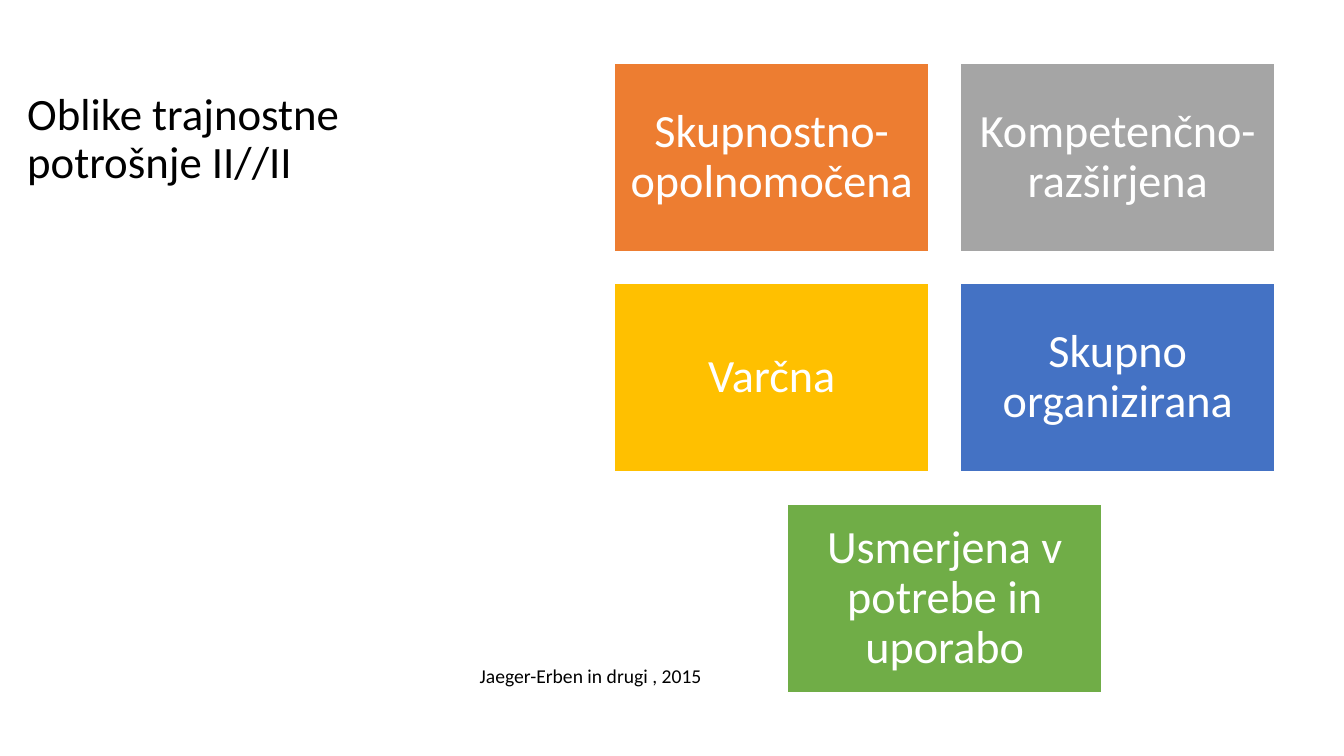
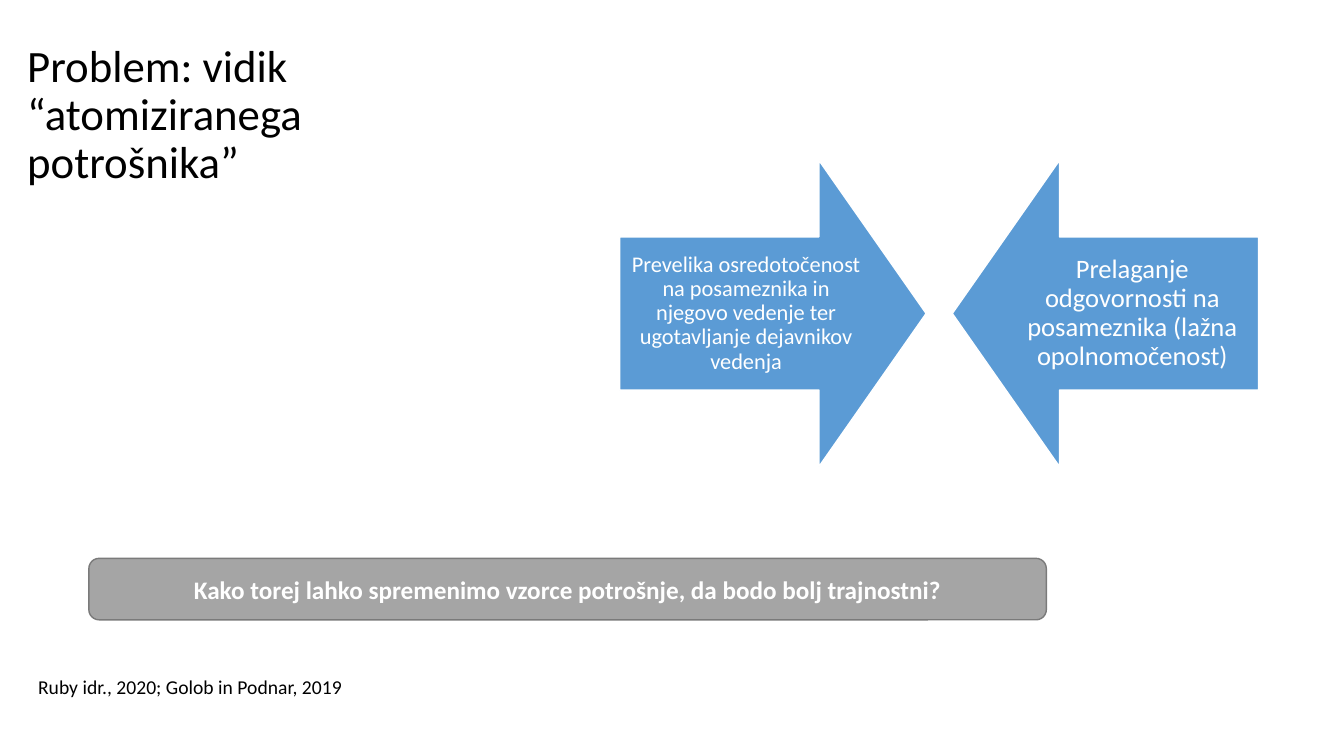
from dataclasses import dataclass

from pptx import Presentation
from pptx.dml.color import RGBColor
from pptx.enum.shapes import MSO_SHAPE as Preset
from pptx.enum.text import MSO_ANCHOR as Anchor, MSO_AUTO_SIZE as AutoSize, PP_ALIGN as Align
from pptx.util import Cm, Pt


@dataclass(frozen=True)
class Theme:
    font: str = "Calibri"
    black: str = "000000"
    white: str = "FFFFFF"
    orange: str = "ED7D31"
    gray: str = "A5A5A5"
    dark_gray: str = "7A7A7A"
    yellow: str = "FFC000"
    blue: str = "4472C4"
    green: str = "70AD47"
    light_blue: str = "5B9BD5"
    title_size: int = 32
    tile_size: int = 33
    banner_size: int = 18
    source_size: int = 14


@dataclass(frozen=True)
class Box:
    """A rectangle on the slide, in centimetres."""
    left: float
    top: float
    width: float
    height: float

    def lengths(self) -> tuple[Cm, Cm, Cm, Cm]:
        return Cm(self.left), Cm(self.top), Cm(self.width), Cm(self.height)


@dataclass(frozen=True)
class Tile:
    text: str
    fill: str


@dataclass(frozen=True)
class Arrow:
    text: str
    preset: Preset
    left: float
    size: int
    inset: float


THEME = Theme()
TITLE_BOX = Box(0.43, 0.43, 10.92, 4.45)

TILE_ROWS = [
    [Tile("Skupnostno-opolnomočena", THEME.orange), Tile("Kompetenčno-razširjena", THEME.gray)],
    [Tile("Varčna", THEME.yellow), Tile("Skupno organizirana", THEME.blue)],
    [Tile("Usmerjena v potrebe in uporabo", THEME.green)],
]
TILE_WIDTH, TILE_HEIGHT, TILE_GAP = 7.92, 4.75, 0.8
TILE_CENTER, TILE_TOP = 23.81, 1.6

ARROWS = [
    Arrow("Prevelika osredotočenost na posameznika in njegovo vedenje ter ugotavljanje "
          "dejavnikov vedenja", Preset.RIGHT_ARROW, 15.62, 16, 0.3),
    Arrow("Prelaganje odgovornosti na posameznika (lažna opolnomočenost)",
          Preset.LEFT_ARROW, 24.0, 19, 0.38),
]
ARROW_TOP, ARROW_SIZE = 4.04, 7.72


def write_text(shape, text: str, *, size: int, color: str, bold: bool = False,
               align: Align = Align.LEFT, anchor: Anchor = Anchor.TOP,
               line_spacing: float = 1.0, inset: float | None = None) -> None:
    frame = shape.text_frame
    frame.text = text
    frame.word_wrap = True
    frame.auto_size = AutoSize.NONE
    frame.vertical_anchor = anchor
    if inset is not None:
        frame.margin_left = frame.margin_right = Cm(inset)
        frame.margin_top = frame.margin_bottom = Cm(inset)
    paragraph = frame.paragraphs[0]
    paragraph.alignment = align
    paragraph.line_spacing = line_spacing
    font = paragraph.runs[0].font
    font.name = THEME.font
    font.size = Pt(size)
    font.bold = bold
    font.color.rgb = RGBColor.from_string(color)


def add_block(slide, preset: Preset, box: Box, text: str, *, fill: str, size: int,
              line: str = THEME.white, bold: bool = False, line_spacing: float = 0.9,
              inset: float | None = None):
    """Add a filled shape with centred white text."""
    shape = slide.shapes.add_shape(preset, *box.lengths())
    shape.shadow.inherit = False
    shape.fill.solid()
    shape.fill.fore_color.rgb = RGBColor.from_string(fill)
    shape.line.color.rgb = RGBColor.from_string(line)
    shape.line.width = Pt(1)
    write_text(shape, text, size=size, color=THEME.white, bold=bold, align=Align.CENTER,
               anchor=Anchor.MIDDLE, line_spacing=line_spacing, inset=inset)
    return shape


def add_titled_slide(presentation, title: str):
    slide = presentation.slides.add_slide(presentation.slide_layouts[5])
    shape = slide.shapes.title
    shape.left, shape.top, shape.width, shape.height = TITLE_BOX.lengths()
    write_text(shape, title, size=THEME.title_size, color=THEME.black,
               anchor=Anchor.BOTTOM, line_spacing=0.9)
    return slide


def add_source(slide, text: str, box: Box) -> None:
    shape = slide.shapes.add_textbox(*box.lengths())
    write_text(shape, text, size=THEME.source_size, color=THEME.black)


def build_forms_slide(presentation) -> None:
    slide = add_titled_slide(presentation, "Oblike trajnostne potrošnje II//II")
    for row, tiles in enumerate(TILE_ROWS):
        row_width = len(tiles) * (TILE_WIDTH + TILE_GAP) - TILE_GAP
        top = TILE_TOP + row * (TILE_HEIGHT + TILE_GAP)
        for column, tile in enumerate(tiles):
            left = TILE_CENTER - row_width / 2 + column * (TILE_WIDTH + TILE_GAP)
            add_block(slide, Preset.RECTANGLE, Box(left, top, TILE_WIDTH, TILE_HEIGHT),
                      tile.text, fill=tile.fill, size=THEME.tile_size, inset=0.36)
    add_source(slide, "Jaeger-Erben in drugi , 2015", Box(11.84, 16.61, 7.04, 0.86))


def build_problem_slide(presentation) -> None:
    slide = add_titled_slide(presentation, "Problem: vidik “atomiziranega potrošnika”")
    for arrow in ARROWS:
        shape = add_block(slide, arrow.preset, Box(arrow.left, ARROW_TOP, ARROW_SIZE, ARROW_SIZE),
                          arrow.text, fill=THEME.light_blue, size=arrow.size, inset=arrow.inset)
        shape.adjustments[0] = 0.5
        shape.adjustments[1] = 0.35
    add_block(slide, Preset.ROUNDED_RECTANGLE, Box(2.24, 14.07, 24.13, 1.55),
              "Kako torej lahko spremenimo vzorce potrošnje, da bodo bolj trajnostni?",
              fill=THEME.gray, line=THEME.dark_gray, size=THEME.banner_size, bold=True,
              line_spacing=1.0)
    add_source(slide, "Ruby idr., 2020; Golob in Podnar, 2019", Box(0.71, 16.87, 9.32, 0.86))


def main() -> None:
    presentation = Presentation()
    presentation.slide_width = Cm(33.87)
    presentation.slide_height = Cm(19.05)
    build_forms_slide(presentation)
    build_problem_slide(presentation)
    presentation.save("out.pptx")


if __name__ == "__main__":
    main()
